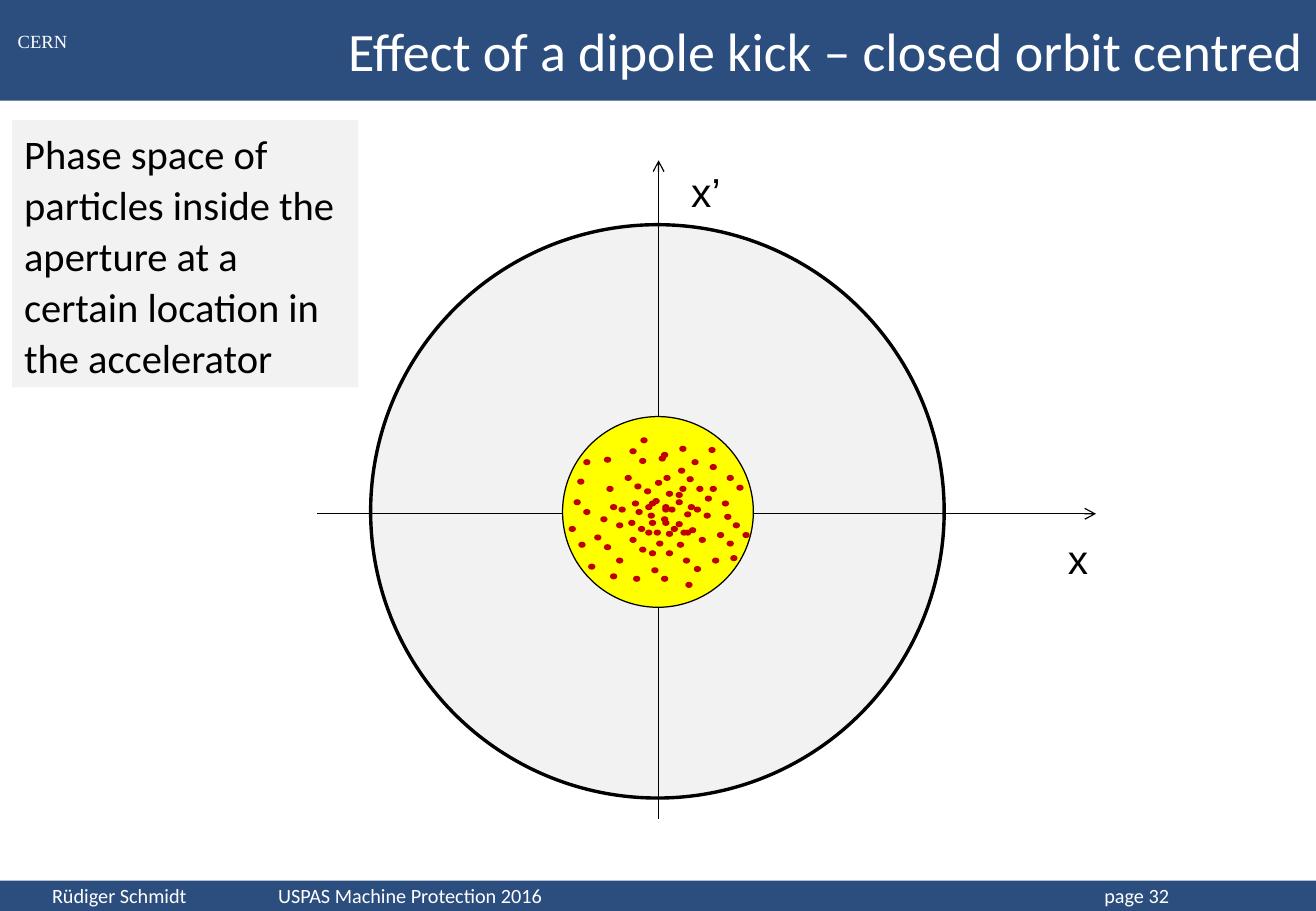
import pptx
import pptx.dml.color
import pptx.enum.shapes
import pptx.enum.text
import pptx.oxml.ns
import pptx.util
from lxml import etree

Inches = pptx.util.Inches
Pt = pptx.util.Pt
MSO_SHAPE = pptx.enum.shapes.MSO_SHAPE
ANCHOR = pptx.enum.text.MSO_ANCHOR
ALIGN = pptx.enum.text.PP_ALIGN
qn = pptx.oxml.ns.qn

COLORS = {
    "bar": "2B4E7E",
    "white": "FFFFFF",
    "black": "000000",
    "grey": "F2F2F2",
    "beam": "FFFF00",
    "particle": "C00000",
}

PARTICLE_SIZE = (0.06, 0.05)
PARTICLES = [
    (4.8, 3.78), (5.83, 3.68), (5.86, 4.59), (5.67, 4.34), (5.9, 4.38),
    (5.62, 4.59), (6.01, 4.57), (5.75, 4.42), (5.98, 4.45), (5.71, 4.66),
    (5.36, 4.67), (5.18, 4.42), (5.4, 4.45), (5.02, 4.15), (5.44, 4.74),
    (5.26, 4.5), (5.48, 4.53), (5.21, 4.74), (5.69, 3.78), (5.71, 4.17),
    (5.44, 4.25), (5.48, 4.04), (5.56, 4.11), (4.99, 4), (4.94, 4.25),
    (4.68, 4.33), (4.72, 4.11), (4.76, 4.46), (4.8, 4.19), (5.44, 3.72),
    (5.39, 3.95), (5.14, 3.91), (5.18, 3.69), (5.22, 3.98), (5.26, 3.77),
    (5.59, 4), (5.79, 4.22), (5.52, 4.33), (4.97, 3.76), (5.94, 4.12),
    (5.98, 3.91), (5.3, 4.02), (6.06, 3.99), (5.59, 3.67), (5.58, 3.85),
    (5.84, 3.82), (5.07, 4.3), (5.84, 4), (4.75, 3.94), (4.89, 4.4),
    (4.84, 4.64), (5.07, 4.59), (5.02, 4.72), (5.33, 4.22), (5.25, 4.33),
    (5.2, 4.12), (4.97, 4.48), (5.42, 3.75), (5.27, 3.6), (5.64, 4.79),
    (5.65, 3.92), (5.73, 4), (5.8, 4.08), (5.66, 4.15), (5.31, 4.15),
    (5.34, 4.12), (5.45, 4.15), (5.63, 4.21), (5.31, 4.36), (5.17, 4.28),
    (5.96, 4.23), (6.03, 4.3), (6.11, 4.38), (5.37, 4.1), (5.48, 4.37),
    (5.5, 4.17), (5.45, 4.28), (5.09, 4.17), (5.57, 4.46), (5.38, 4.36),
    (5.6, 4.36), (5.46, 3.91), (5.34, 4.53), (5.23, 4.19), (5.45, 4.17),
    (5.56, 4.29), (5.56, 4.05), (5.34, 4.28), (5.63, 4.36),
]


def rgb(name):
    return pptx.dml.color.RGBColor.from_string(COLORS[name])


def add_shape(shapes, kind, box, fill, line_width=None):
    sp = shapes.add_shape(kind, *map(Inches, box))
    sp.shadow.inherit = False
    sp.fill.solid()
    sp.fill.fore_color.rgb = rgb(fill)
    if line_width:
        sp.line.color.rgb = rgb("black")
        sp.line.width = Pt(line_width)
    else:
        sp.line.fill.background()
    return sp


def set_text(sp, text, size, color, font="Calibri", align=ALIGN.LEFT,
             anchor=ANCHOR.TOP, wrap=True):
    tf = sp.text_frame
    tf.text = text
    tf.word_wrap = wrap
    tf.vertical_anchor = anchor
    p = tf.paragraphs[0]
    p.alignment = align
    r = p.runs[0]
    r.font.name = font
    r.font.size = Pt(size)
    r.font.color.rgb = rgb(color)
    return p


def add_label(slide, box, text, size, color, **style):
    sp = slide.shapes.add_textbox(*map(Inches, box))
    set_text(sp, text, size, color, **style)


def add_axis(slide, start, end):
    axis = slide.shapes.add_connector(
        pptx.enum.shapes.MSO_CONNECTOR.STRAIGHT, *map(Inches, start + end))
    axis.line.color.rgb = rgb("black")
    axis.line.width = Pt(0.75)
    ln = axis.element.spPr.find(qn("a:ln"))
    etree.SubElement(ln, qn("a:tailEnd"), type="arrow")
    etree.SubElement(axis.element.spPr, qn("a:effectLst"))


def add_frame(slide):
    add_shape(slide.shapes, MSO_SHAPE.RECTANGLE, (0, 7.25, 10.83, 0.25), "bar")
    header = add_shape(slide.shapes, MSO_SHAPE.RECTANGLE, (0, 0, 10.83, 0.83), "bar")

    title = slide.shapes.title
    header.element.addnext(title.element)
    title.left, title.top, title.width, title.height = map(
        Inches, (0.9, 0, 9.93, 0.83))
    set_text(title, "Effect of a dipole kick – closed orbit centred", 32, "white",
             align=ALIGN.RIGHT, anchor=ANCHOR.MIDDLE)

    add_label(slide, (-0.01, 0.2, 0.72, 0.29), "CERN", 11, "white",
              font="Times New Roman", align=ALIGN.CENTER)
    for left, width, text in [
        (0.33, 1.6, "Rüdiger Schmidt"),
        (2.19, 3, "USPAS Machine Protection 2016"),
        (8.99, 1.2, "page 32"),
    ]:
        add_label(slide, (left, 7.25, width, 0.25), text, 12, "white",
                  anchor=ANCHOR.MIDDLE)


def add_beam(slide):
    group = slide.shapes.add_group_shape()
    add_shape(group.shapes, MSO_SHAPE.OVAL, (4.63, 3.43, 1.57, 1.57), "beam", 0.75)
    for position in PARTICLES:
        add_shape(group.shapes, MSO_SHAPE.OVAL, position + PARTICLE_SIZE, "particle")


def add_phase_space(slide):
    add_shape(slide.shapes, MSO_SHAPE.OVAL, (3.05, 1.85, 4.72, 4.72), "grey", 2)
    add_label(slide, (8.69, 4.35, 0.37, 0.5), "x", 24, "black",
              font="Arial", wrap=False)
    add_label(slide, (5.59, 1.33, 0.45, 0.5), "x’", 24, "black",
              font="Arial", wrap=False)
    add_axis(slide, (2.61, 4.23), (9.02, 4.23))
    add_axis(slide, (5.42, 6.74), (5.42, 1.32))
    add_beam(slide)


def add_note(slide):
    sp = add_shape(slide.shapes, MSO_SHAPE.RECTANGLE, (0.1, 0.99, 2.85, 2.2), "grey")
    p = set_text(sp, "Phase space of particles inside the aperture at a certain "
                 "location in the accelerator", 24, "black")
    p.line_spacing = 1.05


def main():
    prs = pptx.Presentation()
    prs.slide_width = Inches(10.83)
    prs.slide_height = Inches(7.5)
    slide = prs.slides.add_slide(prs.slide_layouts[5])
    add_frame(slide)
    add_phase_space(slide)
    add_note(slide)
    prs.save("out.pptx")


if __name__ == "__main__":
    main()
